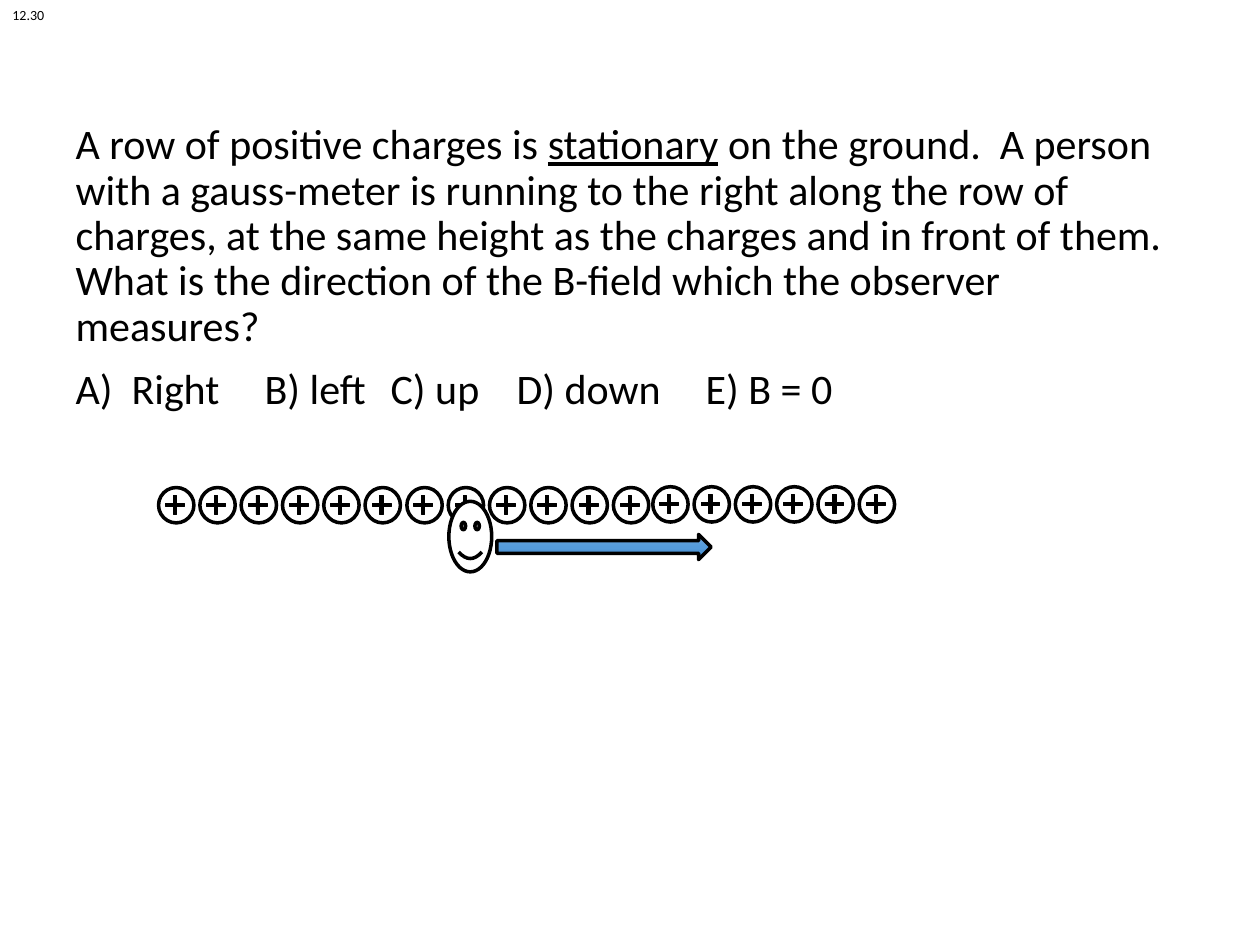
import copy
from dataclasses import dataclass

import pptx
import pptx.util
import pptx.dml.color
import pptx.enum.shapes
import pptx.enum.text
import pptx.oxml.ns

Pt = pptx.util.Pt
RGBColor = pptx.dml.color.RGBColor
Shape = pptx.enum.shapes.MSO_SHAPE
qn = pptx.oxml.ns.qn


@dataclass(frozen=True)
class Theme:
    font: str = "Calibri"
    question_size: float = 24
    label_size: float = 8
    ink: RGBColor = RGBColor(0, 0, 0)
    face: RGBColor = RGBColor(255, 255, 255)
    arrow_stops: tuple = ((0, "71A6DB"), (0.5, "559BDB"), (1, "448ACA"))
    outline: float = 2
    thin_outline: float = 0.5


@dataclass(frozen=True)
class Box:
    left: float
    top: float
    width: float
    height: float

    def lengths(self) -> tuple:
        return Pt(self.left), Pt(self.top), Pt(self.width), Pt(self.height)


@dataclass(frozen=True)
class ChargeGroup:
    left: float
    top: float


THEME = Theme()
CHARGE_GROUPS = (
    ChargeGroup(90.6, 278.6),
    ChargeGroup(232.5, 278.6),
    ChargeGroup(373, 278.1),
)
CHARGES_PER_GROUP = 6
CHARGE_PITCH = 23.6
CHARGE_SIZE = 20.2
PLUS_SIZE = 10.8
PLUS_OFFSET = (4, 4.5)

QUESTION = (
    ("A row of positive charges is ", False),
    ("stationary", True),
    (" on the ground.  A person with a gauss-meter is running to the right "
     "along the row of charges, at the same height as the charges and in front "
     "of them.  What is the direction of the B-field which the observer "
     "measures?", False),
)
ANSWERS = (("A)  Right\tB) left\tC) up\tD) down \tE) B = 0", False),)


def style_font(paragraph, size: float) -> None:
    paragraph.font.name = THEME.font
    paragraph.font.size = Pt(size)
    paragraph.font.color.rgb = THEME.ink


def add_question(slide) -> None:
    body = slide.placeholders[1]
    body.left, body.top, body.width, body.height = Box(36, 67, 648, 327).lengths()
    frame = body.text_frame
    frame.auto_size = pptx.enum.text.MSO_AUTO_SIZE.NONE
    frame.add_paragraph()
    for paragraph, pieces in zip(frame.paragraphs, (QUESTION, ANSWERS)):
        for text, underlined in pieces:
            run = paragraph.add_run()
            run.text = text
            if underlined:
                run.font.underline = True
        paragraph.line_spacing = 0.9
        paragraph.space_before = Pt(10)
        style_font(paragraph, THEME.question_size)
        remove_bullet(paragraph)


def remove_bullet(paragraph) -> None:
    properties = paragraph._p.get_or_add_pPr()
    properties.set("marL", "0")
    properties.set("indent", "0")
    bullet = properties.makeelement(qn("a:buNone"), {})
    properties.insert_element_before(bullet, "a:tabLst", "a:defRPr", "a:extLst")


def add_outlined_shape(shapes, kind: Shape, box: Box, line_width: float,
                       fill: RGBColor | None = None):
    shape = shapes.add_shape(kind, *box.lengths())
    shape.shadow.inherit = False
    shape.line.color.rgb = THEME.ink
    shape.line.width = Pt(line_width)
    if fill is None:
        shape.fill.background()
    else:
        shape.fill.solid()
        shape.fill.fore_color.rgb = fill
    return shape


def add_charge(shapes, left: float, top: float) -> None:
    circle = Box(left, top, CHARGE_SIZE, CHARGE_SIZE)
    add_outlined_shape(shapes, Shape.OVAL, circle, THEME.outline)
    plus_box = Box(left + PLUS_OFFSET[0], top + PLUS_OFFSET[1], PLUS_SIZE, PLUS_SIZE)
    plus = add_outlined_shape(shapes, Shape.CROSS, plus_box, THEME.thin_outline, THEME.ink)
    plus.adjustments[0] = 0.417


def add_charge_row(slide) -> None:
    for charge_group in CHARGE_GROUPS:
        group = slide.shapes.add_group_shape()
        for index in range(CHARGES_PER_GROUP):
            left = charge_group.left + index * CHARGE_PITCH
            add_charge(group.shapes, left, charge_group.top)


def fill_with_gradient(shape) -> None:
    """Fill from top to bottom with the theme's arrow colours."""
    shape.fill.gradient()
    shape.fill.gradient_angle = 270
    stop_list = shape._element.spPr.find(qn("a:gradFill")).find(qn("a:gsLst"))
    stop_list.insert(1, copy.deepcopy(stop_list[0]))
    for stop, (position, color) in zip(shape.fill.gradient_stops, THEME.arrow_stops):
        stop.position = position
        stop.color.rgb = RGBColor.from_string(color)


def add_runner(slide) -> None:
    add_outlined_shape(slide.shapes, Shape.SMILEY_FACE, Box(256.5, 286.5, 24.5, 40.3),
                       THEME.outline, THEME.face)
    arrow = add_outlined_shape(slide.shapes, Shape.RIGHT_ARROW,
                               Box(284, 305.4, 122.4, 14.4), THEME.outline)
    fill_with_gradient(arrow)


def add_section_label(slide) -> None:
    label = slide.shapes.add_textbox(*Box(0, 0, 33, 17).lengths())
    frame = label.text_frame
    frame.word_wrap = False
    frame.auto_size = pptx.enum.text.MSO_AUTO_SIZE.SHAPE_TO_FIT_TEXT
    frame.text = "12.30"
    style_font(frame.paragraphs[0], THEME.label_size)


def main() -> None:
    presentation = pptx.Presentation()
    presentation.slide_width, presentation.slide_height = Pt(720), Pt(540)
    slide = presentation.slides.add_slide(presentation.slide_layouts[1])
    title = slide.shapes.title
    title._element.getparent().remove(title._element)
    add_question(slide)
    add_charge_row(slide)
    add_runner(slide)
    add_section_label(slide)
    presentation.save("out.pptx")


if __name__ == "__main__":
    main()
